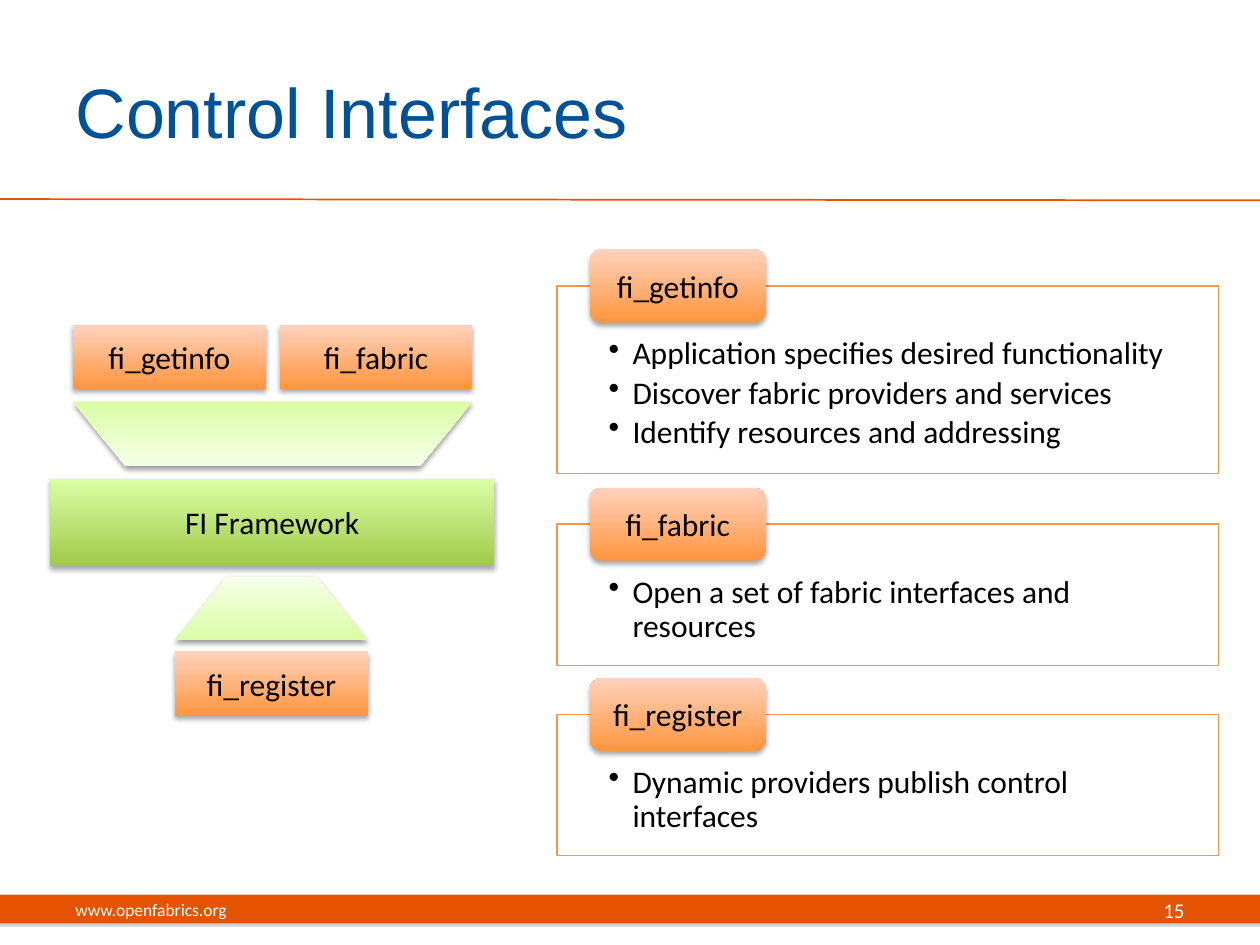
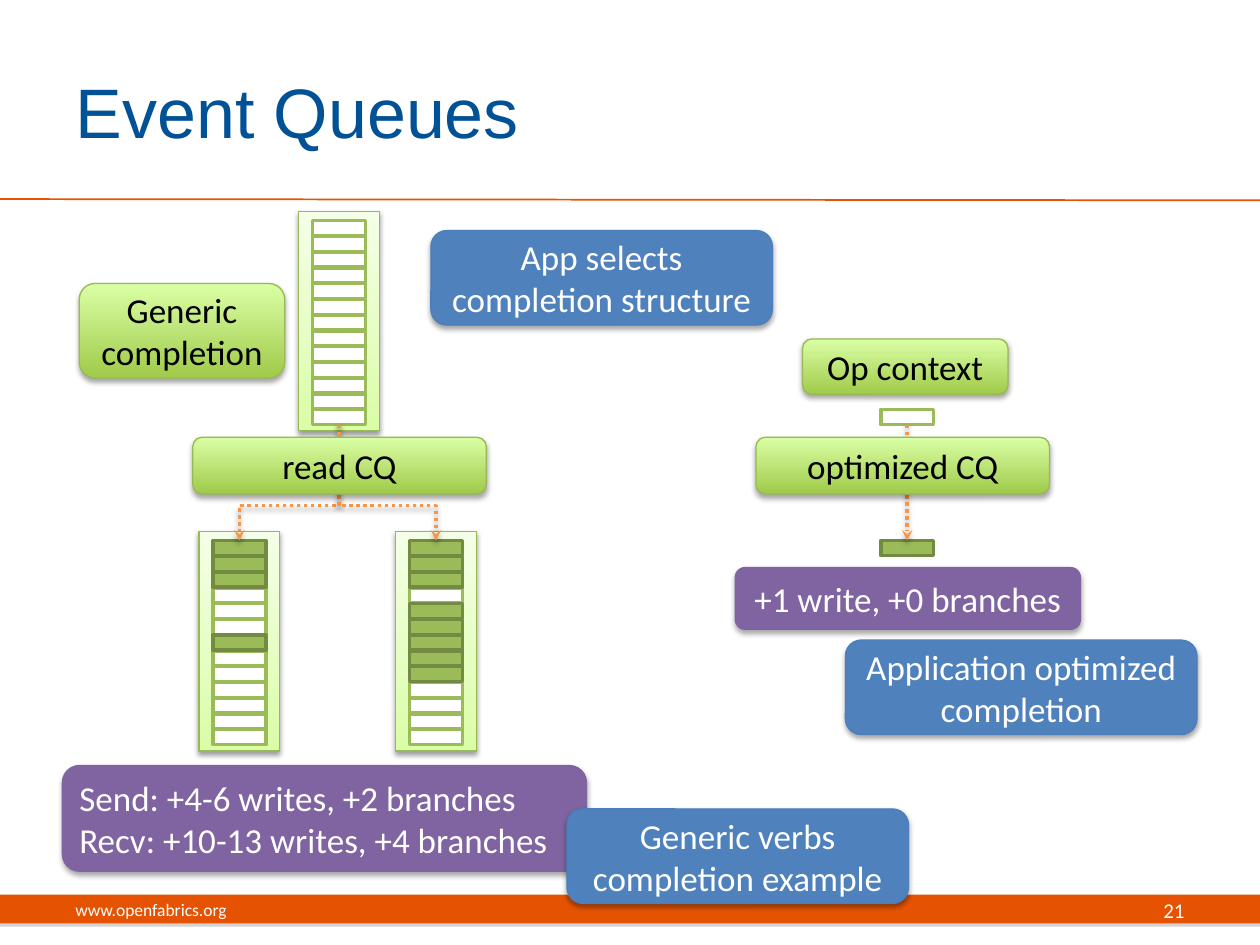
from pptx import Presentation
from pptx.dml.color import RGBColor
from pptx.enum.dml import MSO_LINE
from pptx.enum.shapes import MSO_CONNECTOR as Connector, MSO_SHAPE as Shape
from pptx.enum.text import MSO_ANCHOR as Anchor, PP_ALIGN as Align
from pptx.oxml.ns import qn
from pptx.util import Inches, Pt
from lxml.etree import SubElement

# Colours; a pair is a gradient from bottom to top
WHITE = RGBColor(0xFF, 0xFF, 0xFF)
BLACK = RGBColor(0x00, 0x00, 0x00)
GREY = RGBColor(0x80, 0x80, 0x80)
TITLE_BLUE = RGBColor(0x00, 0x51, 0x95)
BAND_ORANGE = RGBColor(0xE5, 0x53, 0x02)
ORANGE = RGBColor(0xF7, 0x96, 0x46)
GREEN = RGBColor(0x9B, 0xBB, 0x59)
DARK_GREEN = RGBColor(0x73, 0x8A, 0x42)
EDGE_GREEN = RGBColor(0x98, 0xB9, 0x55)
PURPLE = RGBColor(0x80, 0x64, 0xA2)
BLUE = RGBColor(0x4F, 0x81, 0xBD)
EDGE_BLUE = RGBColor(0x4B, 0x7E, 0xBC)
ORANGE_FADE = (RGBColor(0xFF, 0x95, 0x3E), RGBColor(0xFF, 0xD2, 0xBD))
GREEN_FADE = (RGBColor(0xA0, 0xCA, 0x4A), RGBColor(0xDA, 0xFF, 0xA5))
PALE_FADE = (RGBColor(0xDA, 0xFD, 0xA7), RGBColor(0xF5, 0xFF, 0xE7))

BODY_FONT, TITLE_FONT = "Calibri", "Arial"
CELL_COUNT, CELL_PITCH = 13, 0.125
CELL_WIDTH, CELL_HEIGHT = 0.42, 0.12


def write_text(shape, lines, size=18, color=BLACK, font=BODY_FONT, align=Align.CENTER,
               anchor=Anchor.MIDDLE, bullet=False, insets=(0.1, 0.05, 0.1, 0.05)):
    frame = shape.text_frame
    frame.word_wrap = True
    frame.vertical_anchor = anchor
    (frame.margin_left, frame.margin_top,
     frame.margin_right, frame.margin_bottom) = map(Inches, insets)
    for index, line in enumerate(lines):
        para = frame.add_paragraph() if index else frame.paragraphs[0]
        para.alignment = align
        if bullet:
            para.line_spacing = 0.9
            para.space_after = Pt(3)
            props = para._p.get_or_add_pPr()
            props.set("marL", str(Inches(0.19)))
            props.set("indent", str(-Inches(0.19)))
            SubElement(props, qn("a:buChar"), char="•")
        span = para.add_run()
        span.text = line
        span.font.size = Pt(size)
        span.font.name = font
        span.font.color.rgb = color


def add_shadow(effects, color=BLACK, alpha=35, blur=3.1):
    outer = SubElement(effects, qn("a:outerShdw"), blurRad=str(Pt(blur)),
                       dist=str(Pt(1.8)), dir="5400000", rotWithShape="0")
    tint = SubElement(outer, qn("a:srgbClr"), val=str(color))
    SubElement(tint, qn("a:alpha"), val=str(alpha * 1000))


def add_block(page, kind, box, fill, edge=None, width=0.75, shadow=None):
    """Add a preset shape; shadow holds the settings for add_shadow."""
    block = page.shapes.add_shape(kind, *map(Inches, box))
    if isinstance(fill, RGBColor):
        block.fill.solid()
        block.fill.fore_color.rgb = fill
    else:
        block.fill.gradient()
        block.fill.gradient_angle = 90
        for stop, color in zip(block.fill.gradient_stops, fill):
            stop.color.rgb = color
    if edge is None:
        block.line.fill.background()
    else:
        block.line.color.rgb = edge
        block.line.width = Pt(width)
    block.shadow.inherit = False
    if shadow is not None:
        add_shadow(block._element.spPr.find(qn("a:effectLst")), **shadow)
    return block


def add_label(page, kind, box, lines, fill, edge=None, **text_format):
    write_text(add_block(page, kind, box, fill, edge, shadow={}), lines, **text_format)


def add_line(page, kind, start, end, color, width):
    line = page.shapes.add_connector(kind, *map(Inches, (*start, *end)))
    line.line.color.rgb = color
    line.line.width = Pt(width)
    return line, SubElement(line._element.spPr, qn("a:effectLst"))


def add_dotted_arrow(page, start, end, bend=0.7):
    """Drop from start to end, with a sideways step when they are not in line."""
    (x1, y1), (x2, y2) = start, end
    if x1 == x2:
        arrow, effects = add_line(page, Connector.STRAIGHT, start, end, ORANGE, 2)
    else:
        # An elbow starts sideways, so lay it flat around the middle and turn it
        side = 1 if x2 > x1 else -1
        mid_x, mid_y = (x1 + x2) / 2, (y1 + y2) / 2
        reach, half = side * (y2 - y1) / 2, abs(x2 - x1) / 2
        arrow, effects = add_line(page, Connector.ELBOW, (mid_x + reach, mid_y - half),
                                  (mid_x - reach, mid_y + half), ORANGE, 2)
        props = arrow._element.spPr
        props.find(qn("a:xfrm")).set("rot", str((270 if side > 0 else 90) * 60000))
        guides = props.find(qn("a:prstGeom")).find(qn("a:avLst"))
        SubElement(guides, qn("a:gd"), name="adj1", fmla=f"val {round(bend * 100000)}")
    arrow.line.dash_style = MSO_LINE.ROUND_DOT
    SubElement(arrow.line._get_or_add_ln(), qn("a:tailEnd"), type="stealth")
    add_shadow(effects, alpha=38)


def add_page(deck, title, number):
    """Start a slide with its title, rule and footer band."""
    page = deck.slides.add_slide(deck.slide_layouts[5])
    heading = page.shapes.title
    heading.left, heading.top, heading.width, heading.height = map(
        Inches, (0.5, 0.25, 8.17, 1.25))
    write_text(heading, [title], size=40, color=TITLE_BLUE, font=TITLE_FONT,
               align=Align.LEFT)
    add_block(page, Shape.RECTANGLE, (0, 7.1, 10, 0.23), BAND_ORANGE,
              shadow={"color": GREY, "blur": 0})
    add_line(page, Connector.STRAIGHT, (0, 1.58), (10, 1.59), BAND_ORANGE, 1)
    for left, width, text, size, align in (
            (0.5, 3.17, "www.openfabrics.org", 10, Align.LEFT),
            (7.17, 2.33, str(number), 12, Align.RIGHT)):
        box = page.shapes.add_textbox(*map(Inches, (left, 7.02, width, 0.4)))
        write_text(box, [text], size=size, color=WHITE, align=align)
    return page


def add_framework(page, left, top):
    """Stack of calls above and below the framework bar."""
    def place(x, y, width, height):
        return left + x, top + y, width, height

    add_label(page, Shape.RECTANGLE, place(0, 1.22, 3.52, 0.69), ["FI Framework"], GREEN_FADE)
    for box, flipped in ((place(0.18, 0.61, 3.17, 0.51), True),
                         (place(0.99, 2, 1.53, 0.5), False)):
        funnel = add_block(page, Shape.TRAPEZOID, box, PALE_FADE, shadow={"alpha": 38})
        funnel.adjustments[0] = 0.818
        if flipped:
            funnel._element.spPr.find(qn("a:xfrm")).set("flipV", "1")
    for x, y, call in ((0.18, 0, "fi_getinfo"), (1.82, 0, "fi_fabric"),
                       (0.99, 2.59, "fi_register")):
        add_label(page, Shape.RECTANGLE, place(x, y, 1.53, 0.51), [call], ORANGE_FADE)


def add_card(page, box, call, points):
    """Outlined list with the call's tag on its top edge."""
    left, top = box[:2]
    card = add_block(page, Shape.RECTANGLE, box, WHITE, ORANGE)
    write_text(card, points, align=Align.LEFT, anchor=Anchor.TOP, bullet=True,
               insets=(0.41, 0.41, 0.41, 0.14))
    add_label(page, Shape.ROUNDED_RECTANGLE, (left + 0.26, top - 0.29, 1.4, 0.58),
              [call], ORANGE_FADE)


def add_cell(page, left, top, written=False):
    fill, edge = (GREEN, DARK_GREEN) if written else (WHITE, GREEN)
    add_block(page, Shape.RECTANGLE, (left, top, CELL_WIDTH, CELL_HEIGHT), fill, edge, 2)


def add_queue(page, left, top, written=()):
    """Framed column of cells; written cells lie over the empty ones."""
    add_block(page, Shape.RECTANGLE, (left - 0.11, top - 0.07, 0.64, 1.74),
              PALE_FADE, EDGE_GREEN, shadow={"alpha": 38})
    for index in sorted(range(CELL_COUNT), key=lambda cell: cell in written):
        add_cell(page, left, top + index * CELL_PITCH, index in written)


def build_control_interfaces(deck):
    page = add_page(deck, "Control Interfaces", 15)
    cards = (
        ("fi_getinfo", 2.27, 1.49, ["Application specifies desired functionality",
                                    "Discover fabric providers and services",
                                    "Identify resources and addressing"]),
        ("fi_fabric", 4.16, 1.12, ["Open a set of fabric interfaces and resources"]),
        ("fi_register", 5.67, 1.12, ["Dynamic providers publish control interfaces"]),
    )
    for call, top, height, points in cards:
        add_card(page, (4.42, top, 5.25, height), call, points)
    add_framework(page, 0.4, 2.58)


def build_event_queues(deck):
    page = add_page(deck, "Event Queues", 21)

    # Queues and single cells
    add_queue(page, 2.48, 1.75)
    add_queue(page, 1.69, 4.29, {0, 1, 2, 6})
    add_queue(page, 3.25, 4.29, {0, 1, 2, 4, 5, 6, 7, 8})
    add_cell(page, 6.99, 3.25)
    add_cell(page, 6.99, 4.29, written=True)

    # Arrows from source to destination
    for start_x, end_x in ((2.69, 1.9), (2.69, 3.46), (7.2, 7.2)):
        add_dotted_arrow(page, (start_x, 3.37), (end_x, 4.29))

    # Steps, costs and remarks
    steps, costs, remarks = (GREEN_FADE, EDGE_GREEN), (PURPLE, None), (BLUE, EDGE_BLUE)
    labels = (
        ((1.53, 3.47, 2.33, 0.45), ["read CQ"], steps),
        ((6, 3.47, 2.33, 0.45), ["optimized CQ"], steps),
        ((0.63, 2.25, 1.63, 0.75), ["Generic completion"], steps),
        ((6.37, 2.69, 1.63, 0.44), ["Op context"], steps),
        ((0.49, 6.07, 4.17, 0.85), ["Send: +4-6 writes, +2 branches",
                                    "Recv: +10-13 writes, +4 branches"], costs),
        ((5.83, 4.5, 2.75, 0.5), ["+1 write, +0 branches"], costs),
        ((3.42, 1.83, 2.71, 0.75), ["App selects completion structure"], remarks),
        ((4.5, 6.42, 2.71, 0.75), ["Generic verbs completion example"], remarks),
        ((6.71, 5.08, 2.79, 0.75), ["Application optimized completion"], remarks),
    )
    for box, lines, (fill, edge) in labels:
        add_label(page, Shape.ROUNDED_RECTANGLE, box, lines, fill, edge, size=20,
                  color=BLACK if fill == GREEN_FADE else WHITE,
                  align=Align.LEFT if len(lines) > 1 else Align.CENTER)


def main():
    deck = Presentation()
    deck.slide_width, deck.slide_height = Inches(10), Inches(7.5)
    build_control_interfaces(deck)
    build_event_queues(deck)
    deck.save("out.pptx")


if __name__ == "__main__":
    main()
